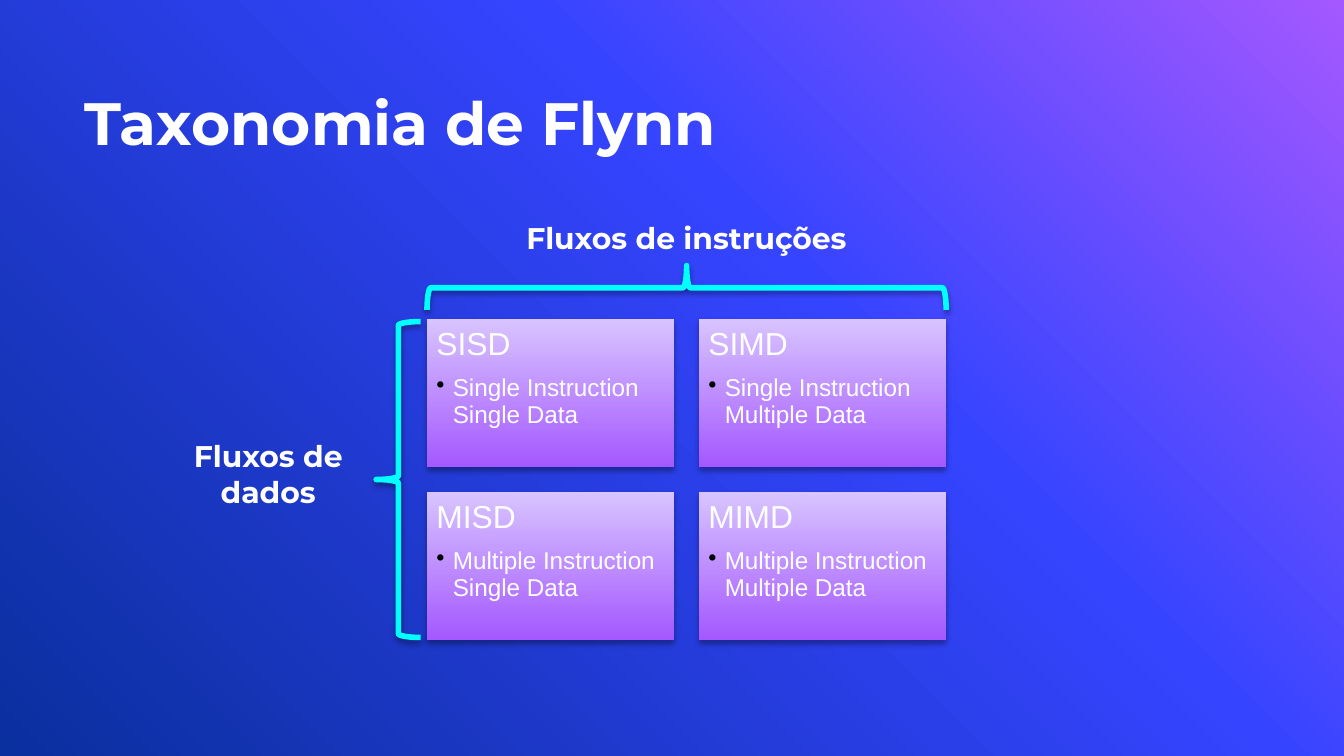
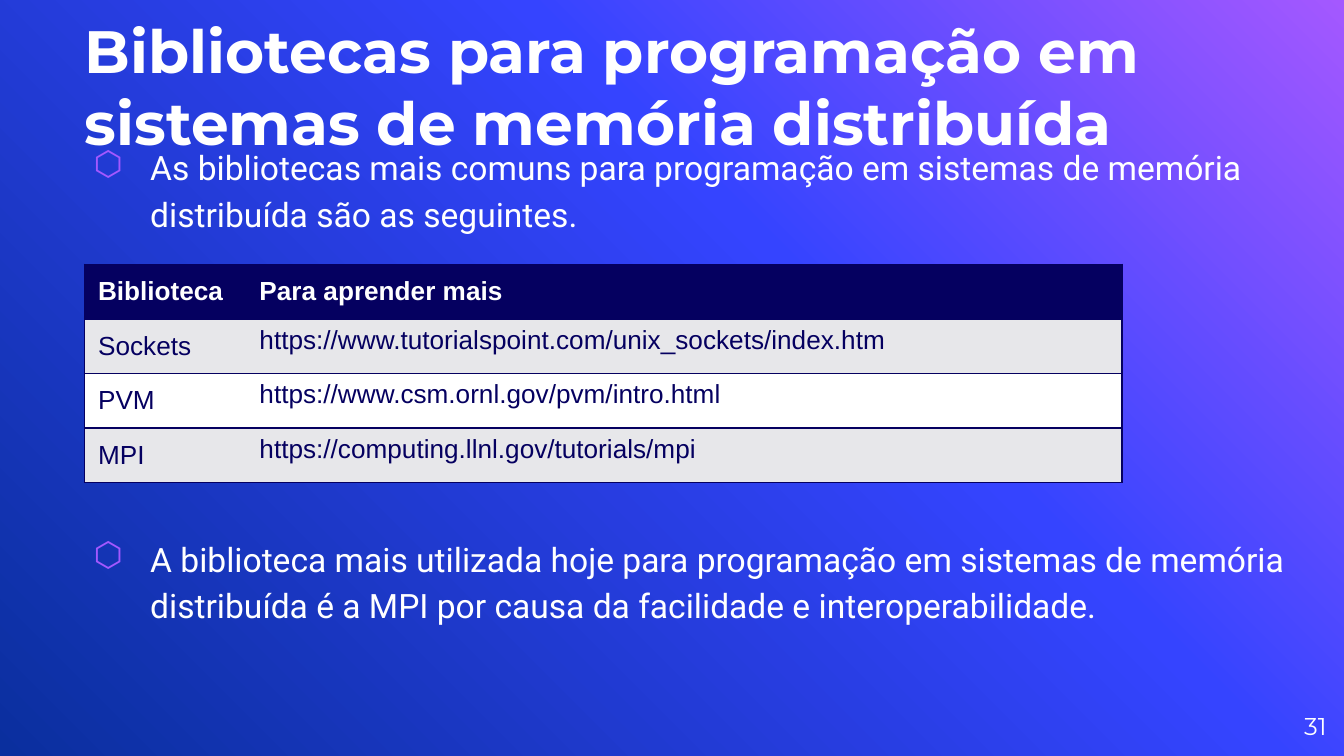
from lxml import etree
from pptx import Presentation
from pptx.dml.color import RGBColor
from pptx.enum.shapes import MSO_SHAPE
from pptx.enum.text import MSO_ANCHOR, PP_ALIGN
from pptx.oxml.ns import qn
from pptx.util import Cm, Pt

RECTANGLE, BRACE = MSO_SHAPE.RECTANGLE, MSO_SHAPE.LEFT_BRACE
TOP, MIDDLE, BOTTOM = MSO_ANCHOR.TOP, MSO_ANCHOR.MIDDLE, MSO_ANCHOR.BOTTOM
LEFT, CENTER, RIGHT = PP_ALIGN.LEFT, PP_ALIGN.CENTER, PP_ALIGN.RIGHT

WHITE, BLACK, NAVY, GREY = "FFFFFF", "000000", "050060", "E7E7EA"
PURPLE, LILAC, CYAN = "A458FF", "D8C4FF", "00FFFF"
BACKGROUND_STOPS = [(0, PURPLE), (39, "3544FF"), (100, "0A2F9E")]
CARD_STOPS = [(0, PURPLE), (100, LILAC)]
TITLE_FONT, BODY_FONT, PLAIN_FONT = "Montserrat", "Roboto", "Arial"
PLAIN_TABLE_STYLE = "{2D5ABB26-0587-4C30-8999-92F81FD0307C}"

CARDS = [
    [("SISD", "Single Instruction Single Data"),
     ("SIMD", "Single Instruction Multiple Data")],
    [("MISD", "Multiple Instruction Single Data"),
     ("MIMD", "Multiple Instruction Multiple Data")],
]
LIBRARIES = [
    ("Biblioteca", "Para aprender mais"),
    ("Sockets", "https://www.tutorialspoint.com/unix_sockets/index.htm"),
    ("PVM", "https://www.csm.ornl.gov/pvm/intro.html"),
    ("MPI", "https://computing.llnl.gov/tutorials/mpi"),
]
REMARKS = [
    "As bibliotecas mais comuns para programação em sistemas de memória "
    "distribuída são as seguintes.",
    "A biblioteca mais utilizada hoje para programação em sistemas de memória "
    "distribuída é a MPI por causa da facilidade e interoperabilidade.",
]


def color(value):
    return RGBColor.from_string(value)


def add_color(parent, value):
    return etree.SubElement(parent, qn("a:srgbClr"), val=value)


def set_gradient(fill, owner, stops, angle):
    """Fill with (percent, colour) stops; the angle runs counterclockwise."""
    fill.gradient()
    fill.gradient_angle = angle
    stop_list = next(owner.iter(qn("a:gsLst")))
    for stop in list(stop_list):
        stop_list.remove(stop)
    for percent, value in stops:
        add_color(etree.SubElement(stop_list, qn("a:gs"), pos=str(percent * 1000)), value)


def add_soft_shadow(shape):
    shape.shadow.inherit = False
    effects = next(shape._element.iter(qn("a:effectLst")))
    shadow = etree.SubElement(
        effects, qn("a:outerShdw"), blurRad=str(Pt(3.1)), dist=str(Pt(1.8)),
        dir="5400000", rotWithShape="0")
    etree.SubElement(add_color(shadow, BLACK), qn("a:alpha"), val="35000")


def style_font(paragraph, name, size, value=WHITE, bold=False):
    font = paragraph.font
    font.name, font.size, font.bold = name, Pt(size), bold
    font.color.rgb = color(value)


def add_bullet(paragraph, character, value, indent, hanging):
    properties = paragraph._p.get_or_add_pPr()
    properties.set("marL", str(Cm(indent)))
    properties.set("indent", str(-Cm(hanging)))
    add_color(etree.SubElement(properties, qn("a:buClr")), value)
    etree.SubElement(properties, qn("a:buChar"), char=character)


def prepare_frame(frame, margin, anchor=TOP):
    frame.word_wrap = True
    frame.vertical_anchor = anchor
    frame.margin_left = frame.margin_right = Cm(margin)
    frame.margin_top = frame.margin_bottom = Cm(margin)


def add_text(slide, box, text, size, bold=False, align=LEFT, anchor=TOP, margin=0):
    frame = slide.shapes.add_textbox(*map(Cm, box)).text_frame
    prepare_frame(frame, margin, anchor)
    paragraph = frame.paragraphs[0]
    paragraph.text, paragraph.alignment = text, align
    style_font(paragraph, TITLE_FONT, size, bold=bold)


def new_slide(presentation, title):
    slide = presentation.slides.add_slide(presentation.slide_layouts[6])
    set_gradient(slide.background.fill, slide._element, BACKGROUND_STOPS, 225)
    add_text(slide, (1.6, 0.58, 22.94, 2.39), title, 32, bold=True, anchor=BOTTOM)
    return slide


def add_card(slide, box, acronym, meaning):
    card = slide.shapes.add_shape(RECTANGLE, *map(Cm, box))
    set_gradient(card.fill, card._element, CARD_STOPS, 90)
    card.line.fill.background()
    add_soft_shadow(card)
    frame = card.text_frame
    prepare_frame(frame, 0.18)
    heading, detail = frame.paragraphs[0], frame.add_paragraph()
    add_bullet(detail, "•", BLACK, 0.31, 0.31)
    for paragraph, text, size, after in ((heading, acronym, 17, 7), (detail, meaning, 13, 2)):
        paragraph.text, paragraph.alignment = text, LEFT
        paragraph.line_spacing, paragraph.space_after = 0.9, Pt(after)
        style_font(paragraph, PLAIN_FONT, size)


def add_brace(slide, center_x, center_y, length, rotation=0):
    depth = 0.84
    brace = slide.shapes.add_shape(
        BRACE, Cm(center_x - depth / 2), Cm(center_y - length / 2), Cm(depth), Cm(length))
    brace.rotation = rotation
    brace.fill.background()
    brace.line.color.rgb = color(CYAN)
    brace.line.width = Pt(3)
    add_soft_shadow(brace)


def add_taxonomy(slide, left, top, width, height):
    """Fill the box with the card grid; braces and labels go above and to its left."""
    gap = 0.47
    card_width, card_height = (width - gap) / 2, (height - gap) / 2
    for row, cards in enumerate(CARDS):
        for column, (acronym, meaning) in enumerate(cards):
            box = (left + column * (card_width + gap), top + row * (card_height + gap),
                   card_width, card_height)
            add_card(slide, box, acronym, meaning)
    add_brace(slide, left - 0.54, top + height / 2, height - 0.1)
    add_brace(slide, left + width / 2, top - 0.59, width, rotation=90)
    for text, box in (
        ("Fluxos de dados", (left - 4.79, top + 2.1, 3.58, 1.63)),
        ("Fluxos de instruções", (left, top - 2.02, width, 0.94)),
    ):
        add_text(slide, box, text, 16, bold=True, align=CENTER, margin=0.15)


def add_remarks(slide, left, top, width, height):
    """Two bullets, set apart to leave room for the table."""
    frame = slide.shapes.add_textbox(Cm(left), Cm(top), Cm(width), Cm(height)).text_frame
    prepare_frame(frame, 0)
    first, second = frame.paragraphs[0], frame.add_paragraph()
    second.space_before = Pt(160)
    for paragraph, text in zip((first, second), REMARKS):
        paragraph.text, paragraph.line_spacing = text, 1.15
        add_bullet(paragraph, "⬡", PURPLE, 1.27, 1.07)
        style_font(paragraph, BODY_FONT, 18)


def add_borders(cell, sides):
    properties = cell._tc.get_or_add_tcPr()
    for side in sides:
        line = etree.SubElement(properties, qn(f"a:ln{side}"), w=str(Pt(1)))
        add_color(etree.SubElement(line, qn("a:solidFill")), NAVY)


def add_library_table(slide, left, top, width, height):
    first_width = 3.05
    table = slide.shapes.add_table(
        len(LIBRARIES), 2, Cm(left), Cm(top), Cm(width), Cm(height)).table
    next(table._tbl.iter(qn("a:tableStyleId"))).text = PLAIN_TABLE_STYLE
    table.horz_banding = False
    table.columns[0].width = Cm(first_width)
    table.columns[1].width = Cm(width - first_width)
    for row, texts in enumerate(LIBRARIES):
        header = row == 0
        fill = NAVY if header else (WHITE, GREY)[row % 2]
        for column, text in enumerate(texts):
            cell = table.cell(row, column)
            add_borders(cell, ("LTB", "RTB")[column])
            cell.fill.solid()
            cell.fill.fore_color.rgb = color(fill)
            cell.vertical_anchor = MIDDLE if header or column == 0 else TOP
            paragraph = cell.text_frame.paragraphs[0]
            paragraph.text = text
            style_font(paragraph, PLAIN_FONT, 14, WHITE if header else NAVY, header)


def build_taxonomy_slide(presentation):
    slide = new_slide(presentation, "Taxonomia de Flynn")
    add_taxonomy(slide, 8.07, 6.03, 9.81, 6.07)


def build_libraries_slide(presentation):
    slide = new_slide(
        presentation, "Bibliotecas para programação em sistemas de memória distribuída")
    add_remarks(slide, 1.57, 2.67, 22.94, 9.91)
    add_text(slide, (23.55, 13.18, 1.52, 1.09), "31", 13, align=RIGHT, anchor=MIDDLE)
    add_library_table(slide, 1.6, 5, 19.61, 4.12)


def main():
    presentation = Presentation()
    presentation.slide_width, presentation.slide_height = Cm(25.4), Cm(14.29)
    build_taxonomy_slide(presentation)
    build_libraries_slide(presentation)
    presentation.save("out.pptx")


if __name__ == "__main__":
    main()
